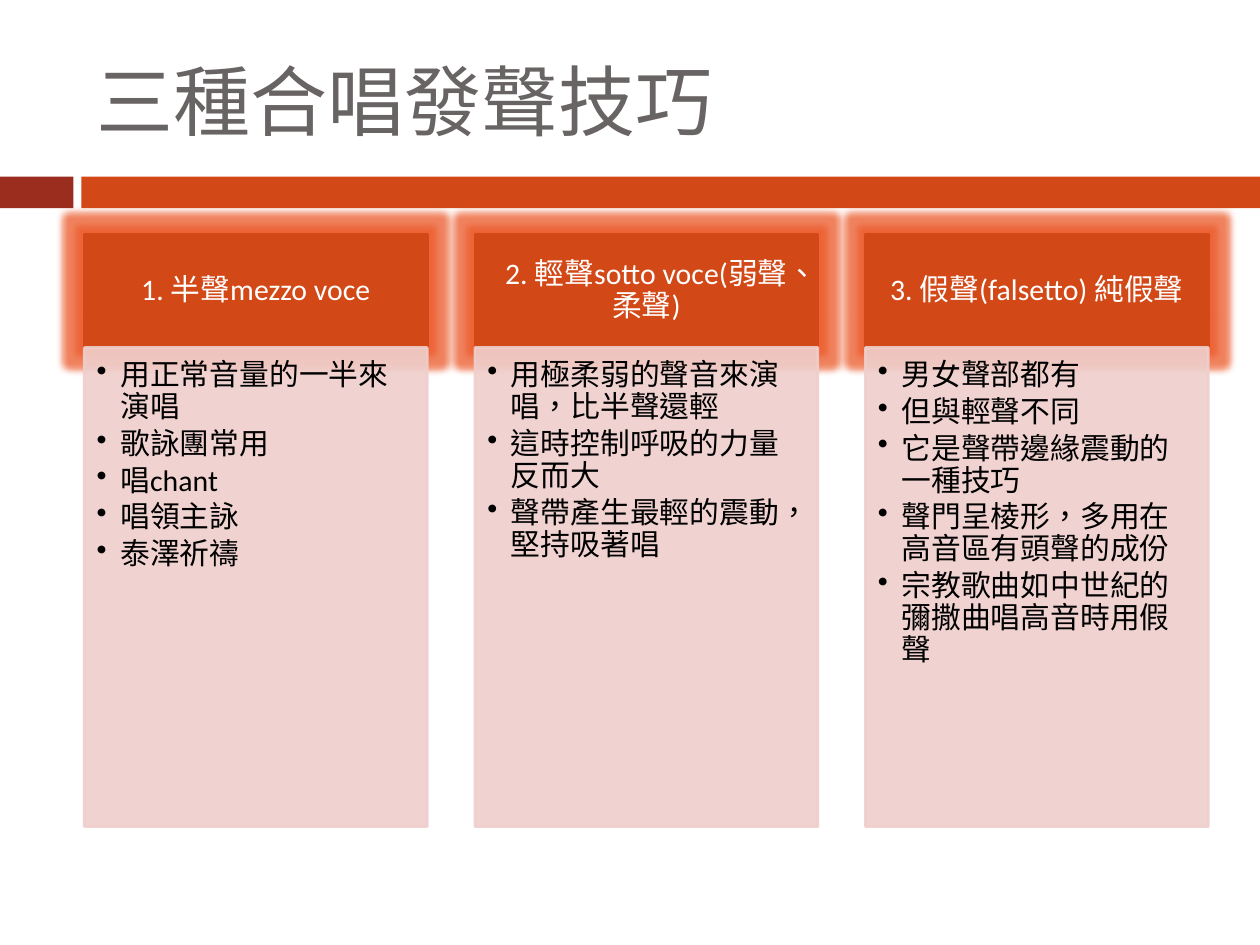
"""Build a slide comparing three choral voice techniques in columns."""
from lxml import etree
from pptx import Presentation
from pptx.dml.color import RGBColor
from pptx.enum.lang import MSO_LANGUAGE_ID
from pptx.enum.shapes import MSO_SHAPE
from pptx.enum.text import MSO_ANCHOR, PP_ALIGN
from pptx.oxml.ns import qn
from pptx.util import Pt

RECTANGLE = MSO_SHAPE.RECTANGLE
TOP, MIDDLE = MSO_ANCHOR.TOP, MSO_ANCHOR.MIDDLE
LEFT, CENTER = PP_ALIGN.LEFT, PP_ALIGN.CENTER
CHINESE = MSO_LANGUAGE_ID.TRADITIONAL_CHINESE

ORANGE, RED, PINK = "D34817", "9B2D1F", "EFCFCC"
MARGIN, PITCH, COLUMN_WIDTH = 48.2, 223.2, 196
HEADER_TOP, HEADER_HEIGHT, PANEL_HEIGHT = 133.8, 64.8, 273.8
COLUMNS = [
    ("1. 半聲mezzo voce",
     ["用正常音量的一半來演唱", "歌詠團常用", "唱chant", "唱領主詠", "泰澤祈禱"]),
    ("2. 輕聲sotto voce(弱聲、柔聲)",
     ["用極柔弱的聲音來演唱，比半聲還輕", "這時控制呼吸的力量反而大",
      "聲帶產生最輕的震動，堅持吸著唱"]),
    ("3. 假聲(falsetto) 純假聲",
     ["男女聲部都有", "但與輕聲不同", "它是聲帶邊緣震動的一種技巧",
      "聲門呈棱形，多用在高音區有頭聲的成份",
      "宗教歌曲如中世紀的彌撒曲唱高音時用假聲"]),
]

deck = Presentation()
deck.slide_width, deck.slide_height = Pt(720), Pt(540)
page = deck.slides.add_slide(deck.slide_layouts[6])


def add_box(left, top, width, height, color, outlined=False):
    box = page.shapes.add_shape(RECTANGLE, Pt(left), Pt(top), Pt(width), Pt(height))
    box.shadow.inherit = False
    box.fill.solid()
    box.fill.fore_color.rgb = RGBColor.from_string(color)
    if outlined:
        box.line.color.rgb = RGBColor.from_string(color)
        box.line.width = Pt(1.5)
    else:
        box.line.fill.background()
    return box


def write(box, lines, size, color, anchor, align, insets, space_after=0):
    frame = box.text_frame
    frame.text = "\n".join(lines)
    frame.word_wrap = True
    frame.vertical_anchor = anchor
    (frame.margin_left, frame.margin_top,
     frame.margin_right, frame.margin_bottom) = map(Pt, insets)
    for para in frame.paragraphs:
        para.alignment = align
        if space_after:
            para.line_spacing = 0.9
            para.space_after = Pt(space_after)
        for span in para.runs:
            span.font.size = Pt(size)
            span.font.name = "Calibri"
            span.font.language_id = CHINESE
            span.font.color.rgb = RGBColor.from_string(color)


add_box(0, 101, 42, 18, RED)
add_box(46.5, 101, 673.5, 18, ORANGE)
title = page.shapes.add_textbox(Pt(MARGIN), Pt(18), Pt(642), Pt(78))
write(title, ["三種合唱發聲技巧"], 44, "696464", MIDDLE, LEFT, (7.2, 3.6, 7.2, 3.6))

for index, (heading, points) in enumerate(COLUMNS):
    left = MARGIN + index * PITCH
    header = add_box(left, HEADER_TOP, COLUMN_WIDTH, HEADER_HEIGHT, ORANGE, True)
    write(header, [heading], 17, "FFFFFF", MIDDLE, CENTER, (9.5, 5.4, 9.5, 5.4), 5.95)
    effects = header.element.spPr.find(qn("a:effectLst"))
    glow = etree.SubElement(effects, qn("a:glow"), rad=str(Pt(8)))
    glow_color = etree.SubElement(glow, qn("a:srgbClr"), val="EC5A2A")
    etree.SubElement(glow_color, qn("a:alpha"), val="75000")

    panel = add_box(left, HEADER_TOP + HEADER_HEIGHT, COLUMN_WIDTH, PANEL_HEIGHT, PINK, True)
    for tint in panel.element.spPr.iter(qn("a:srgbClr")):
        etree.SubElement(tint, qn("a:alpha"), val="90000")
    write(panel, points, 17, "000000", TOP, LEFT, (7.2, 7.2, 9.5, 10.7), 2.55)
    for para in panel.text_frame.paragraphs:
        properties = para._p.get_or_add_pPr()
        properties.set("marL", str(Pt(13.5)))
        properties.set("indent", str(Pt(-13.5)))
        etree.SubElement(properties, qn("a:buChar"), char="•")

deck.save("out.pptx")
